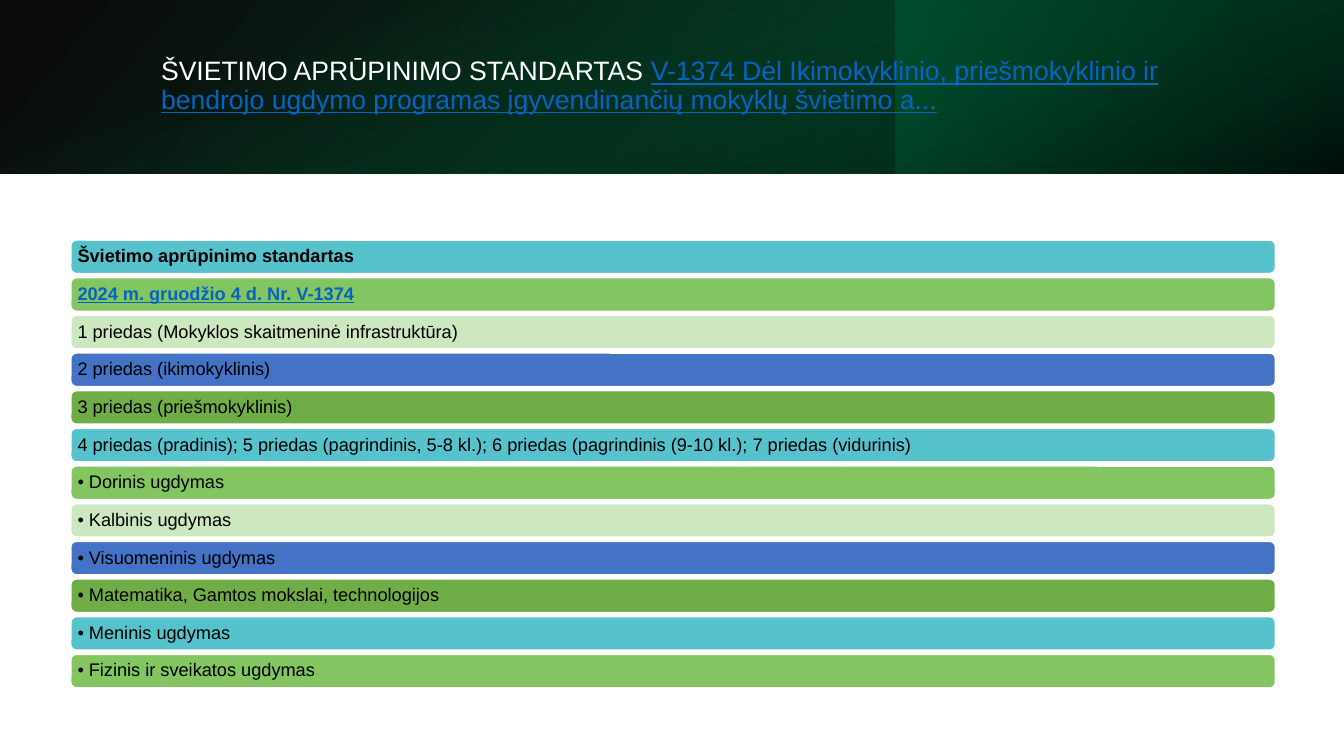
from dataclasses import dataclass

from lxml.etree import SubElement
from pptx import Presentation
from pptx.dml.color import RGBColor
from pptx.enum.shapes import MSO_SHAPE
from pptx.enum.text import MSO_ANCHOR, PP_ALIGN
from pptx.oxml.ns import qn
from pptx.util import Pt

WHITE = RGBColor(0xFF, 0xFF, 0xFF)
BLACK = RGBColor(0x00, 0x00, 0x00)
LINK_BLUE = RGBColor(0x05, 0x63, 0xC1)
GREEN_BASE = RGBColor(0x00, 0x50, 0x2F)
GREEN_DARK = RGBColor(0x00, 0x36, 0x1F)
GREEN_BRIGHT = RGBColor(0x00, 0x6B, 0x3E)
TEAL = RGBColor(0x55, 0xC2, 0xCC)
LIME = RGBColor(0x82, 0xC5, 0x61)
PALE_GREEN = RGBColor(0xCD, 0xE8, 0xC0)
BLUE = RGBColor(0x44, 0x72, 0xC4)
LEAF_GREEN = RGBColor(0x70, 0xAD, 0x47)
BAR_COLORS = (TEAL, LIME, PALE_GREEN, BLUE, LEAF_GREEN)

SLIDE_W, SLIDE_H = 960, 540
BAND_H = 124
BAR_LEFT, BAR_TOP, BAR_W, BAR_H, BAR_PITCH = 50.6, 171.5, 860.4, 23.9, 26.9


@dataclass(frozen=True)
class Stop:
    position: float
    color: RGBColor
    opacity: int = 100


@dataclass(frozen=True)
class Band:
    left: float
    top: float
    width: float
    height: float
    angle: float
    stops: tuple[Stop, Stop]
    rotation: float = 0
    flipped: bool = False


@dataclass(frozen=True)
class Bar:
    text: str
    bold: bool = False
    link: bool = False


BANDS = (
    Band(0, 0, SLIDE_W, BAND_H, 140,
         (Stop(0, BLACK, 96), Stop(1, GREEN_BASE)), flipped=True),
    Band(640, 0, 320, BAND_H, 320,
         (Stop(0.19, GREEN_DARK, 68), Stop(1, GREEN_BRIGHT, 79)), rotation=180),
    Band((SLIDE_W - BAND_H) / 2, (BAND_H - SLIDE_W) / 2, BAND_H, SLIDE_W, 340,
         (Stop(0.23, GREEN_BRIGHT, 0), Stop(0.99, BLACK, 74)), rotation=90),
)

BARS = (
    Bar("Švietimo aprūpinimo standartas", bold=True),
    Bar("2024 m. gruodžio 4 d. Nr. V-1374", bold=True, link=True),
    Bar("1 priedas (Mokyklos skaitmeninė infrastruktūra)"),
    Bar("2 priedas (ikimokyklinis)"),
    Bar("3 priedas (priešmokyklinis)"),
    Bar("4 priedas (pradinis); 5 priedas (pagrindinis, 5-8 kl.); "
        "6 priedas (pagrindinis (9-10 kl.); 7 priedas (vidurinis)"),
    Bar("• Dorinis ugdymas"),
    Bar("• Kalbinis ugdymas"),
    Bar("• Visuomeninis ugdymas"),
    Bar("• Matematika, Gamtos mokslai, technologijos"),
    Bar("• Meninis ugdymas"),
    Bar("• Fizinis ir sveikatos ugdymas"),
)


def add_text(p, text: str, *, size: float, color: RGBColor = BLACK,
             bold: bool = False, underline: bool = False) -> None:
    p.alignment = PP_ALIGN.LEFT
    p.line_spacing = 0.9
    r = p.add_run()
    r.text = text
    r.font.name = "Arial"
    r.font.size = Pt(size)
    r.font.color.rgb = color
    r.font.bold = bold
    r.font.underline = underline


def add_band(slide, band: Band) -> None:
    sp = slide.shapes.add_shape(MSO_SHAPE.RECTANGLE, Pt(band.left), Pt(band.top),
                                Pt(band.width), Pt(band.height))
    sp.shadow.inherit = False
    sp.line.fill.background()
    sp.rotation = band.rotation
    if band.flipped:
        sp.element.spPr.find(qn("a:xfrm")).set("flipH", "1")
    sp.fill.gradient()
    sp.fill.gradient_angle = 360 - band.angle
    for gradient_stop, stop in zip(sp.fill.gradient_stops, band.stops):
        gradient_stop.position = stop.position
        gradient_stop.color.rgb = stop.color
    colors = sp.element.spPr.iter(qn("a:srgbClr"))
    for color, stop in zip(colors, band.stops):
        SubElement(color, qn("a:alpha")).set("val", str(stop.opacity * 1000))


def add_title(slide) -> None:
    tf = slide.shapes.add_textbox(Pt(108), Pt(27.4), Pt(790.6), Pt(69.1)).text_frame
    tf.word_wrap = True
    tf.vertical_anchor = MSO_ANCHOR.MIDDLE
    p = tf.paragraphs[0]
    add_text(p, "ŠVIETIMO APRŪPINIMO STANDARTAS ", size=19, color=WHITE)
    add_text(p, "V-1374 Dėl Ikimokyklinio, priešmokyklinio ir bendrojo ugdymo programas "
                "įgyvendinančių mokyklų švietimo a...",
             size=19, color=LINK_BLUE, underline=True)


def add_bar(slide, index: int, bar: Bar) -> None:
    sp = slide.shapes.add_shape(MSO_SHAPE.ROUNDED_RECTANGLE, Pt(BAR_LEFT),
                                Pt(BAR_TOP + index * BAR_PITCH), Pt(BAR_W), Pt(BAR_H))
    sp.shadow.inherit = False
    sp.fill.solid()
    sp.fill.fore_color.rgb = BAR_COLORS[index % len(BAR_COLORS)]
    sp.line.color.rgb = WHITE
    sp.line.width = Pt(1)
    tf = sp.text_frame
    tf.word_wrap = True
    tf.vertical_anchor = MSO_ANCHOR.MIDDLE
    tf.margin_left = tf.margin_right = tf.margin_top = tf.margin_bottom = Pt(3.6)
    add_text(tf.paragraphs[0], bar.text, size=13, bold=bar.bold, underline=bar.link,
             color=LINK_BLUE if bar.link else BLACK)


def main() -> None:
    prs = Presentation()
    prs.slide_width, prs.slide_height = Pt(SLIDE_W), Pt(SLIDE_H)
    slide = prs.slides.add_slide(prs.slide_layouts[6])
    for band in BANDS:
        add_band(slide, band)
    add_title(slide)
    for index, bar in enumerate(BARS):
        add_bar(slide, index, bar)
    prs.save("out.pptx")


if __name__ == "__main__":
    main()
